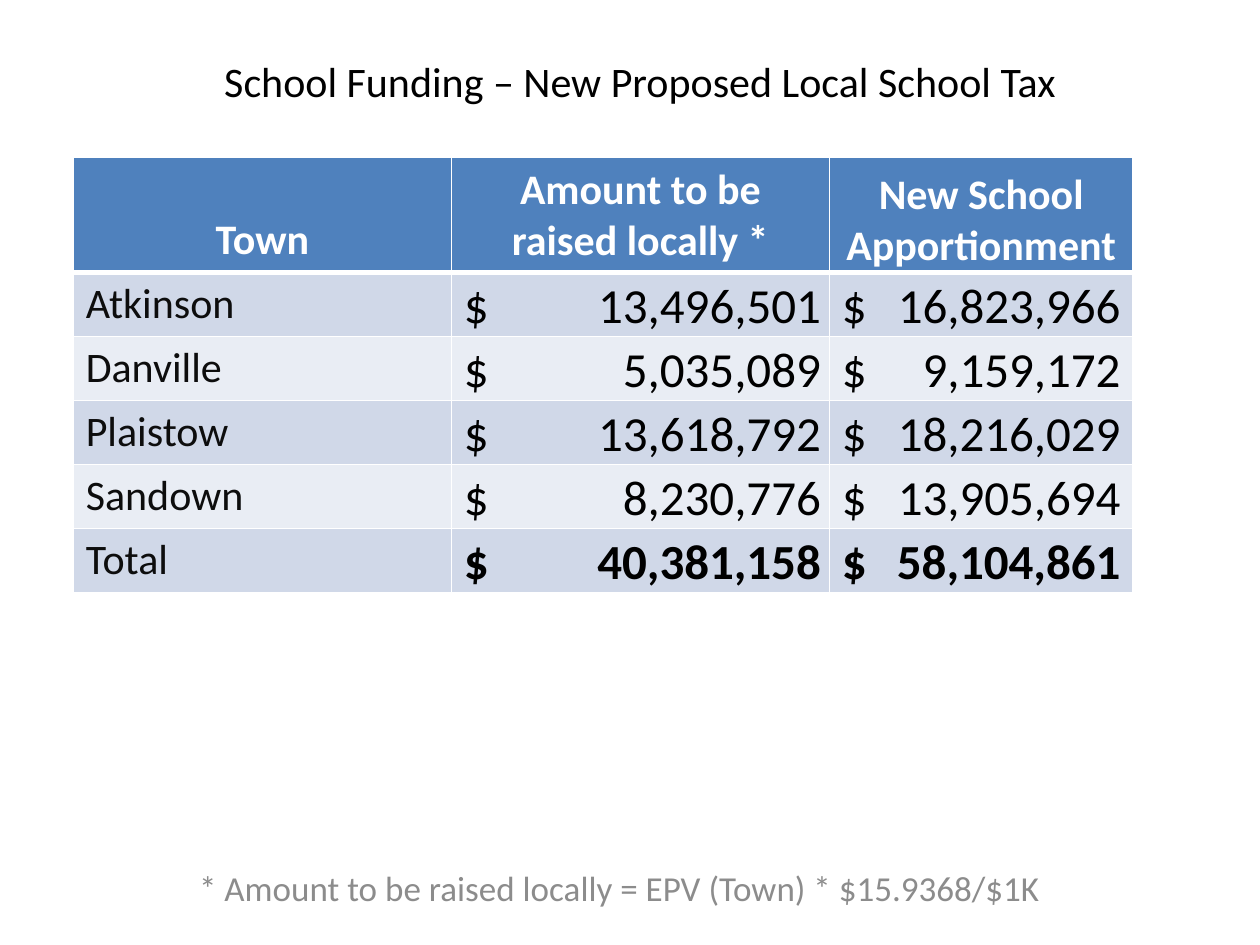
from dataclasses import dataclass

from lxml import etree
from pptx import Presentation
from pptx.dml.color import RGBColor
from pptx.enum.text import MSO_ANCHOR, PP_ALIGN
from pptx.oxml.ns import qn
from pptx.util import Cm, Pt

TOP, MIDDLE, BOTTOM = MSO_ANCHOR.TOP, MSO_ANCHOR.MIDDLE, MSO_ANCHOR.BOTTOM
LEFT, CENTER = PP_ALIGN.LEFT, PP_ALIGN.CENTER

BLACK = RGBColor(0x00, 0x00, 0x00)
NEAR_BLACK = RGBColor(0x0D, 0x0D, 0x0D)
WHITE = RGBColor(0xFF, 0xFF, 0xFF)
GRAY = RGBColor(0x8C, 0x8C, 0x8C)
HEADER_BLUE = RGBColor(0x4F, 0x81, 0xBD)
BANDS = (RGBColor(0xD0, 0xD8, 0xE8), RGBColor(0xE9, 0xED, 0xF4))

FONT = "Calibri"
COLUMN_WIDTHS = (Cm(7.62), Cm(7.62), Cm(6.12))
AMOUNT_TABS = (Cm(7.2), Cm(5.62))
HEADER_HEIGHT, ROW_HEIGHT = Cm(2.31), Cm(1.29)
SIDE, EDGE, TIGHT = Cm(0.25), Cm(0.13), Cm(0.03)
THIN, THICK = Pt(1), Pt(3)
HEADINGS = ("Town", "Amount to be raised locally *", "New School Apportionment")


@dataclass(frozen=True)
class TownRow:
    town: str
    amounts: tuple[str, str]
    bold: bool = False


TOWN_ROWS = (
    TownRow("Atkinson", ("13,496,501", "16,823,966")),
    TownRow("Danville", ("5,035,089", "9,159,172")),
    TownRow("Plaistow", ("13,618,792", "18,216,029")),
    TownRow("Sandown", ("8,230,776", "13,905,694")),
    TownRow("Total", ("40,381,158", "58,104,861"), bold=True),
)


def write_text(frame, text: str, *, size: int = 24, color: RGBColor = BLACK,
               bold: bool = False, align: PP_ALIGN = LEFT, tab: int | None = None) -> None:
    frame.word_wrap = True
    para = frame.paragraphs[0]
    para.alignment = align
    if tab is not None:
        tabs = etree.SubElement(para._p.get_or_add_pPr(), qn("a:tabLst"))
        etree.SubElement(tabs, qn("a:tab"), pos=str(tab), algn="r")
    span = para.add_run()
    span.text = text
    span.font.name = FONT
    span.font.size = Pt(size)
    span.font.bold = bold
    span.font.color.rgb = color


def add_text(page, text: str, left: int, top: int, width: int, height: int,
             anchor: MSO_ANCHOR, **text_format) -> None:
    box = page.shapes.add_textbox(left, top, width, height)
    box.text_frame.vertical_anchor = anchor
    write_text(box.text_frame, text, align=CENTER, **text_format)


def style_cell(cell, fill: RGBColor, anchor: MSO_ANCHOR, margins: tuple[int, int, int, int],
               top_line: int = THIN, bottom_line: int = THIN) -> None:
    cell.vertical_anchor = anchor
    cell.margin_left, cell.margin_top, cell.margin_right, cell.margin_bottom = margins
    properties = cell._tc.get_or_add_tcPr()
    for tag, width in (("lnL", THIN), ("lnR", THIN), ("lnT", top_line), ("lnB", bottom_line)):
        line = etree.SubElement(properties, qn(f"a:{tag}"), w=str(int(width)))
        solid = etree.SubElement(line, qn("a:solidFill"))
        etree.SubElement(solid, qn("a:srgbClr"), val=str(WHITE))
    cell.fill.solid()
    cell.fill.fore_color.rgb = fill


def add_funding_table(page) -> None:
    height = HEADER_HEIGHT + ROW_HEIGHT * len(TOWN_ROWS)
    table = page.shapes.add_table(len(TOWN_ROWS) + 1, len(HEADINGS), Cm(1.48), Cm(3.18),
                                  sum(COLUMN_WIDTHS), height).table
    for column, width in zip(table.columns, COLUMN_WIDTHS):
        column.width = width
    for row in table.rows:
        row.height = ROW_HEIGHT
    table.rows[0].height = HEADER_HEIGHT

    roomy = (SIDE, EDGE, SIDE, EDGE)
    heading_margins = (roomy, roomy, (TIGHT, TIGHT, TIGHT, 0))
    for index, (heading, margins) in enumerate(zip(HEADINGS, heading_margins)):
        cell = table.cell(0, index)
        style_cell(cell, HEADER_BLUE, BOTTOM, margins, bottom_line=THICK)
        write_text(cell.text_frame, heading, color=WHITE, bold=True, align=CENTER)

    for number, entry in enumerate(TOWN_ROWS, start=1):
        fill = BANDS[(number - 1) % len(BANDS)]
        top_line = THICK if number == 1 else THIN
        town_cell = table.cell(number, 0)
        style_cell(town_cell, fill, TOP, roomy, top_line)
        write_text(town_cell.text_frame, entry.town, color=NEAR_BLACK)
        for index, (amount, tab) in enumerate(zip(entry.amounts, AMOUNT_TABS), start=1):
            cell = table.cell(number, index)
            style_cell(cell, fill, BOTTOM, (SIDE, TIGHT, TIGHT, 0), top_line)
            write_text(cell.text_frame, f"$\t{amount}", size=28, bold=entry.bold, tab=tab)


def main() -> None:
    deck = Presentation()
    deck.slide_width, deck.slide_height = Cm(25.4), Cm(19.05)
    page = deck.slides.add_slide(deck.slide_layouts[6])
    add_text(page, "School Funding – New Proposed Local School Tax",
             Cm(2.11), Cm(0.64), Cm(21.59), Cm(1.96), MIDDLE)
    add_funding_table(page)
    add_text(page, "* Amount to be raised locally = EPV (Town) * $15.9368/$1K",
             Cm(3.6), Cm(17.35), Cm(17.78), Cm(1.07), TOP, size=20, color=GRAY)
    deck.save("out.pptx")


if __name__ == "__main__":
    main()
